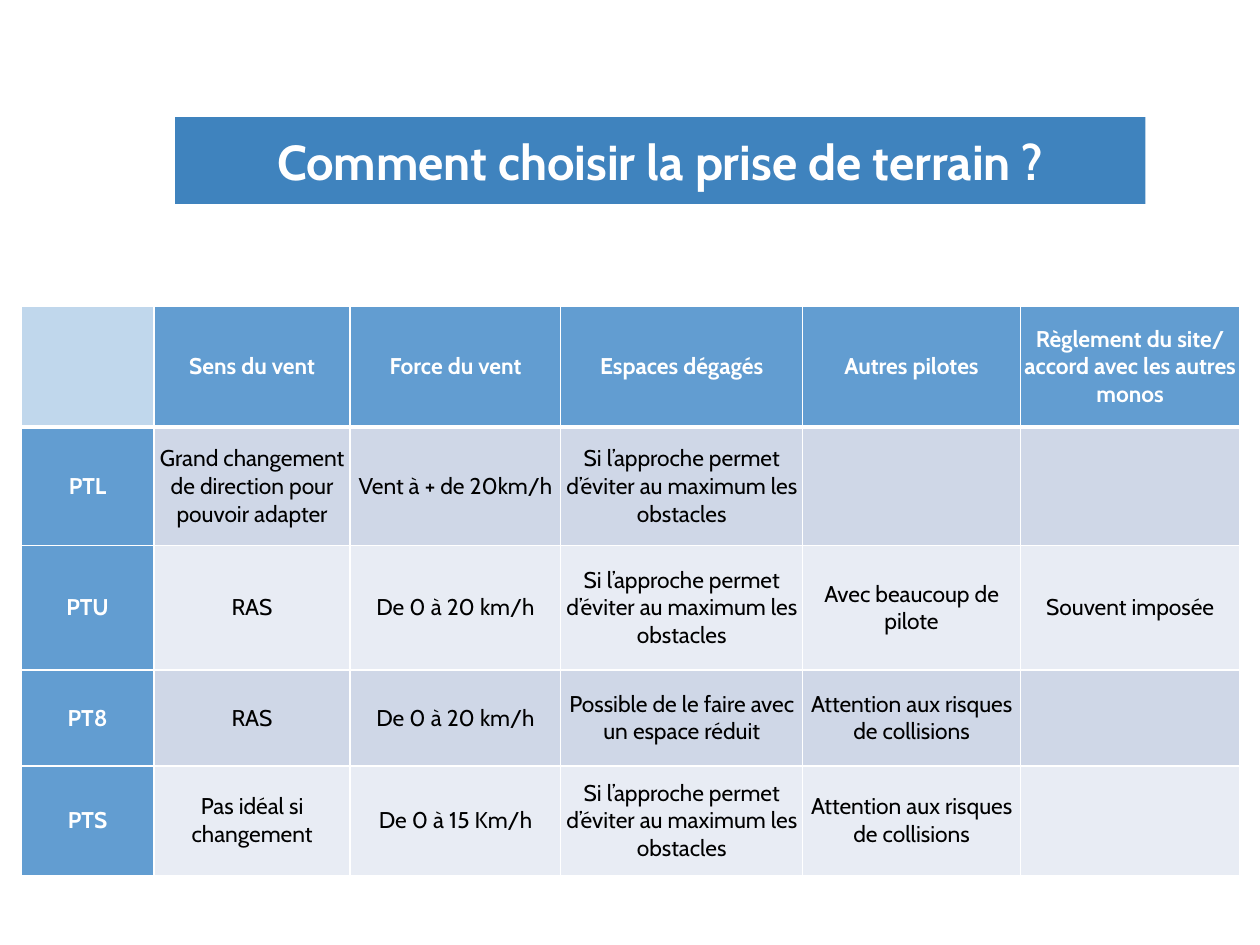
from lxml import etree
from pptx import Presentation
from pptx.dml.color import RGBColor
from pptx.enum.shapes import MSO_SHAPE
from pptx.enum.text import MSO_ANCHOR, PP_ALIGN
from pptx.oxml.ns import qn
from pptx.util import Cm, Pt

FONT = "Cabin"
WHITE = RGBColor(0xFF, 0xFF, 0xFF)
BLACK = RGBColor(0x00, 0x00, 0x00)
TITLE_BLUE = RGBColor(0x3F, 0x83, 0xBE)
HEADER_BLUE = RGBColor(0x62, 0x9D, 0xD1)
CORNER_BLUE = RGBColor(0xC0, 0xD7, 0xEC)
BANDS = (RGBColor(0xE8, 0xEC, 0xF4), RGBColor(0xCF, 0xD7, 0xE7))

COL_WIDTHS = (2.67, 3.96, 4.24, 4.88, 4.39, 4.42)
ROW_HEIGHTS = (2.44, 2.39, 2.51, 1.93, 2.21)
CLEAR = "Si l’approche permet d’éviter au maximum les obstacles"
COLLISIONS = "Attention aux risques de collisions"
ROWS = (
    ("", "Sens du vent", "Force du vent", "Espaces dégagés", "Autres pilotes",
     "Règlement du site/ accord avec les autres monos"),
    ("PTL", "Grand changement de direction pour pouvoir adapter",
     "Vent à + de 20km/h", CLEAR, "", ""),
    ("PTU", "RAS", "De 0 à 20 km/h", CLEAR, "Avec beaucoup de pilote",
     "Souvent imposée"),
    ("PT8", "RAS", "De 0 à 20 km/h",
     "Possible de le faire avec un espace réduit", COLLISIONS, ""),
    ("PTS", "Pas idéal si changement", "De 0 à 15 Km/h", CLEAR, COLLISIONS, ""),
)


def write(tf, text, size, color, bold):
    tf.text = text
    p = tf.paragraphs[0]
    p.alignment = PP_ALIGN.CENTER
    for r in p.runs:
        r.font.name = FONT
        r.font.size = Pt(size)
        r.font.bold = bold
        r.font.color.rgb = color


def set_borders(cell, top, bottom):
    """White borders; widths in points. Must come before the fill."""
    tcPr = cell._tc.get_or_add_tcPr()
    for side, width in (("L", 1), ("R", 1), ("T", top), ("B", bottom)):
        ln = etree.SubElement(tcPr, qn(f"a:ln{side}"), w=str(Pt(width)))
        fill = etree.SubElement(ln, qn("a:solidFill"))
        etree.SubElement(fill, qn("a:srgbClr"), val=str(WHITE))


def cell_fill(row, col):
    if row == 0 and col == 0:
        return CORNER_BLUE
    if row == 0 or col == 0:
        return HEADER_BLUE
    return BANDS[row % 2]


def style_cell(cell, row, col, text):
    heading = row == 0 or col == 0
    cell.margin_left = cell.margin_right = 0
    cell.margin_top = cell.margin_bottom = 0
    cell.vertical_anchor = MSO_ANCHOR.MIDDLE
    write(cell.text_frame, text, 13, WHITE if heading else BLACK, heading)
    # Thick rule under the column headings
    set_borders(cell, top=3 if row == 1 and col > 0 else 1,
                bottom=3 if row == 0 else 1)
    cell.fill.solid()
    cell.fill.fore_color.rgb = cell_fill(row, col)


def add_title(s, text):
    sp = s.shapes.add_shape(MSO_SHAPE.RECTANGLE, Cm(3.53), Cm(2.36),
                            Cm(19.56), Cm(1.75))
    sp.shadow.inherit = False
    sp.fill.solid()
    sp.fill.fore_color.rgb = TITLE_BLUE
    sp.line.fill.background()
    tf = sp.text_frame
    tf.word_wrap = True
    tf.vertical_anchor = MSO_ANCHOR.MIDDLE
    write(tf, text, 28, WHITE, True)


def add_comparison(s):
    table = s.shapes.add_table(
        len(ROWS), len(COL_WIDTHS), Cm(0.43), Cm(6.17),
        Cm(sum(COL_WIDTHS)), Cm(sum(ROW_HEIGHTS))).table
    for column, width in zip(table.columns, COL_WIDTHS):
        column.width = Cm(width)
    for row, height in zip(table.rows, ROW_HEIGHTS):
        row.height = Cm(height)
    for i, texts in enumerate(ROWS):
        for j, text in enumerate(texts):
            style_cell(table.cell(i, j), i, j, text)


def main():
    prs = Presentation()
    prs.slide_width, prs.slide_height = Cm(25.4), Cm(19.05)
    s = prs.slides.add_slide(prs.slide_layouts[6])
    add_title(s, "Comment choisir la prise de terrain ?")
    add_comparison(s)
    prs.save("out.pptx")


if __name__ == "__main__":
    main()
